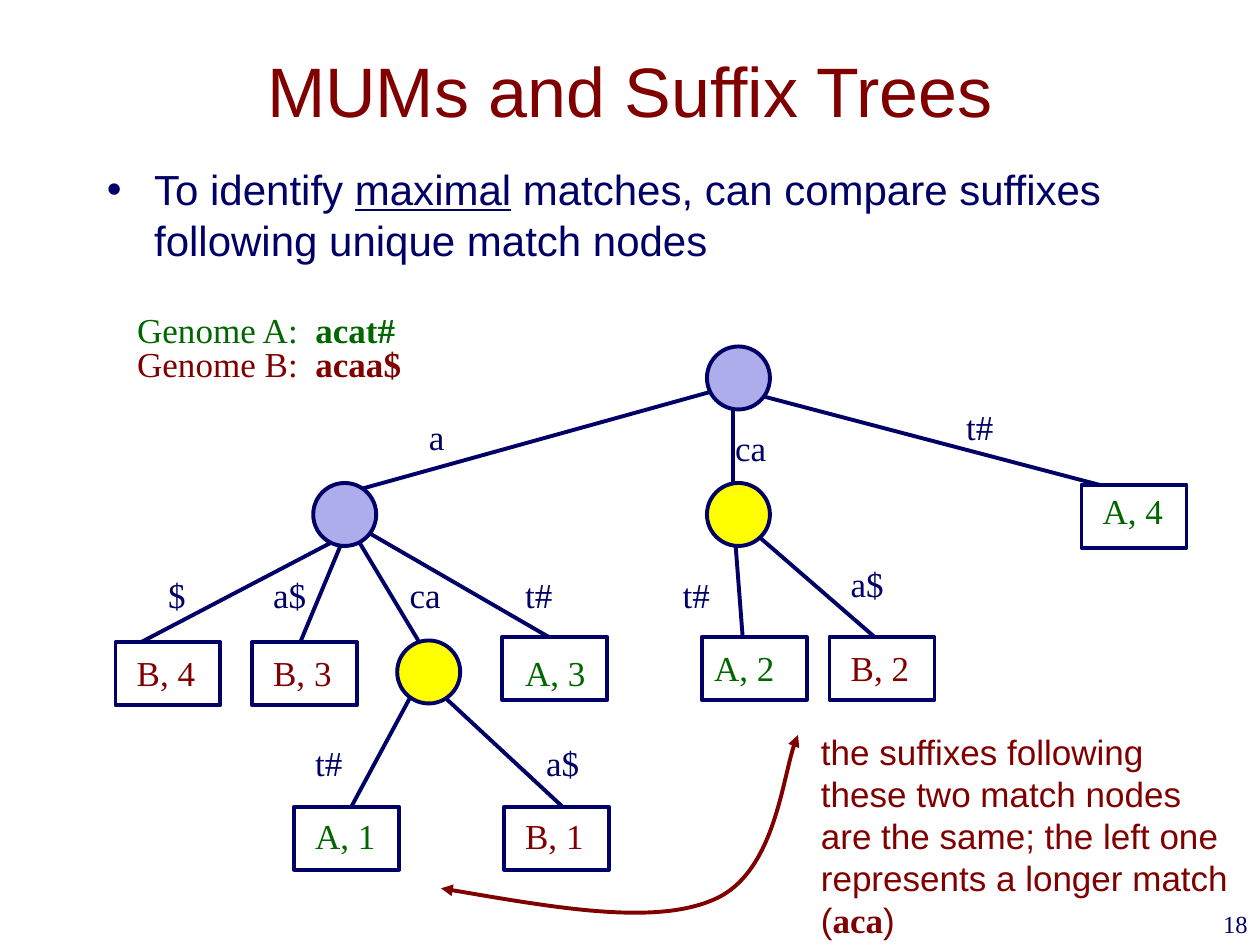
import pptx
import pptx.util
import pptx.dml.color
import pptx.enum.shapes
import pptx.enum.text
from lxml import etree

Pt = pptx.util.Pt
SHAPES = pptx.enum.shapes.MSO_SHAPE
ALIGN = pptx.enum.text.PP_ALIGN
COLORS = {"navy": "000066", "maroon": "800000", "green": "006600",
          "lilac": "ADADEB", "yellow": "FFFF00", "white": "FFFFFF"}
SERIF, SANS = "Times New Roman", "Arial"
NODE_SIZE = 36
LEAF_WIDTH, LEAF_HEIGHT = 60, 36
LEAF_TEXT_WIDTH = 51
LABEL_HEIGHT = 31
LABEL_WIDTHS = {"a": 24, "ca": 34, "t#": 32, "a$": 36, "$": 26}


def rgb(name):
    return pptx.dml.color.RGBColor.from_string(COLORS[name])


def drawing_element(parent, tag, **attributes):
    return etree.SubElement(parent, pptx.oxml.ns.qn("a:" + tag), attributes)


class SlidePainter:
    """Holds the slide and the style shared by all its elements."""

    def __init__(self, page, line_width=2.25):
        self.page = page
        self.line_width = line_width

    def style_span(self, span, size, color, font=SERIF, bold=False):
        span.font.size = Pt(size)
        span.font.name = font
        span.font.bold = bold
        span.font.color.rgb = rgb(color)

    def style_line(self, line, color="navy"):
        line.color.rgb = rgb(color)
        line.width = Pt(self.line_width)

    def title(self, text, left, top, width, height):
        box = self.page.shapes.title
        box.left, box.top, box.width, box.height = map(Pt, (left, top, width, height))
        frame = box.text_frame
        frame.text = text
        frame.vertical_anchor = pptx.enum.text.MSO_ANCHOR.MIDDLE
        frame.paragraphs[0].alignment = ALIGN.CENTER
        self.style_span(frame.paragraphs[0].runs[0], 40, "maroon", SANS)

    def text(self, lines, left, top, width, height, size=20, color="navy",
             font=SERIF, align=None):
        """Each line is a string or a list of strings, one per run."""
        box = self.page.shapes.add_textbox(*map(Pt, (left, top, width, height)))
        frame = box.text_frame
        frame.word_wrap = True
        for index, line in enumerate(lines):
            para = frame.add_paragraph() if index else frame.paragraphs[0]
            para.alignment = align
            for part in [line] if isinstance(line, str) else line:
                span = para.add_run()
                span.text = part
                self.style_span(span, size, color, font)
        return frame

    def bullet(self, para, indent):
        para.space_before = Pt(4.8)
        properties = para._p.get_or_add_pPr()
        properties.set("marL", str(Pt(indent)))
        properties.set("indent", str(-Pt(indent)))
        drawing_element(properties, "buFont", typeface=SANS)
        drawing_element(properties, "buChar", char="•")

    def label(self, text, left, top):
        self.text([text], left, top, LABEL_WIDTHS[text], LABEL_HEIGHT)

    def edge(self, x1, y1, x2, y2):
        line = self.page.shapes.add_connector(
            pptx.enum.shapes.MSO_CONNECTOR.STRAIGHT, *map(Pt, (x1, y1, x2, y2)))
        self.style_line(line.line)
        drawing_element(line._element.spPr, "effectLst")

    def shape(self, kind, left, top, width, height, fill):
        shape = self.page.shapes.add_shape(kind, *map(Pt, (left, top, width, height)))
        shape.shadow.inherit = False
        shape.fill.solid()
        shape.fill.fore_color.rgb = rgb(fill)
        self.style_line(shape.line)

    def node(self, left, top, fill):
        self.shape(SHAPES.OVAL, left, top, NODE_SIZE, NODE_SIZE, fill)

    def leaf(self, text, left, top, dx, dy):
        """Draw a leaf box with its text shifted by dx, dy from the corner."""
        self.shape(SHAPES.RECTANGLE, left, top, LEAF_WIDTH, LEAF_HEIGHT, "white")
        color = "green" if text.startswith("A") else "maroon"
        self.text([text], left + dx, top + dy, LEAF_TEXT_WIDTH, LABEL_HEIGHT, color=color)

    def double_arrow(self, start, points, color):
        """Draw a Bezier curve; every three points make one segment."""
        builder = self.page.shapes.build_freeform(*map(Pt, start))
        builder.add_line_segments([tuple(map(Pt, point)) for point in points], close=False)
        curve = builder.convert_to_shape()
        curve.shadow.inherit = False
        curve.fill.background()
        self.style_line(curve.line, color)
        segments = curve._element.spPr.findall(".//" + pptx.oxml.ns.qn("a:lnTo"))
        for first in range(0, len(segments), 3):
            bezier = drawing_element(segments[first].getparent(), "cubicBezTo")
            for segment in segments[first:first + 3]:
                bezier.append(segment[0])
                segment.getparent().remove(segment)
        line = curve.line._get_or_add_ln()
        for end in ("headEnd", "tailEnd"):
            drawing_element(line, end, type="triangle")


EDGES = [(203, 306, 239, 366), (239, 390, 197, 468), (245, 390, 329, 468),
         (419, 294, 425, 372), (419, 294, 509, 372), (203, 300, 317, 366),
         (419, 222, 419, 294), (413, 222, 197, 282), (419, 222, 647, 282),
         (197, 306, 71, 372), (197, 306, 167, 378)]
NODES = [(404, 198, "lilac"), (404, 276, "yellow"),
         (227, 366, "yellow"), (179, 276, "lilac")]
LEAVES = [("A, 2", 401, 364, 0, 2), ("B, 4", 66, 367, 5, 2),
          ("A, 4", 618, 277, 5, -1), ("A, 3", 287, 364, 6, 5),
          ("A, 1", 168, 461, 5, 1), ("B, 3", 144, 367, 5, 2),
          ("B, 2", 474, 364, 5, 2), ("B, 1", 288, 461, 5, 1)]
LABELS = [("a", 238, 234), ("ca", 413, 240), ("t#", 545, 228),
          ("$", 89, 324), ("a$", 149, 324), ("ca", 227, 324),
          ("t#", 293, 324), ("t#", 383, 324), ("a$", 479, 318),
          ("t#", 173, 420), ("a$", 305, 420)]
GENOMES = [("A", "acat#", 173, "green"), ("B", "acaa$", 192, "maroon")]


def main():
    deck = pptx.Presentation()
    deck.slide_width, deck.slide_height = Pt(720), Pt(540)
    painter = SlidePainter(deck.slides.add_slide(deck.slide_layouts[5]))

    painter.title("MUMs and Suffix Trees", 54, 6, 612, 90)
    body = painter.text(
        [["To identify ", "maximal", " matches, can compare suffixes following unique match nodes"]],
        54, 90, 612, 96, size=24, font=SANS)
    painter.bullet(body.paragraphs[0], 27)
    body.paragraphs[0].runs[1].font.underline = True

    for genome, sequence, top, color in GENOMES:
        frame = painter.text([[f"Genome {genome}:  ", sequence]],
                             71.3, top, 170, LABEL_HEIGHT, color=color)
        frame.paragraphs[0].runs[1].font.bold = True

    for edge in EDGES:
        painter.edge(*edge)
    for node in NODES:
        painter.node(*node)
    for leaf in LEAVES:
        painter.leaf(*leaf)
    for label in LABELS:
        painter.label(*label)

    painter.double_arrow(
        (252, 507.6),
        [(313, 518), (374, 529), (408, 514), (442, 499.5), (448, 436), (456, 420)],
        "maroon")
    remark = painter.text(
        ["the suffixes following", "these two match nodes",
         ["are the same; the left one represents a longer match (", "aca", ")"]],
        462, 414, 270, 128, color="maroon", font=SANS)
    painter.style_span(remark.paragraphs[2].runs[1], 20, "maroon", bold=True)
    painter.text(["18"], 570, 516, 150, 36, size=14, align=ALIGN.RIGHT)
    deck.save("out.pptx")


if __name__ == "__main__":
    main()
